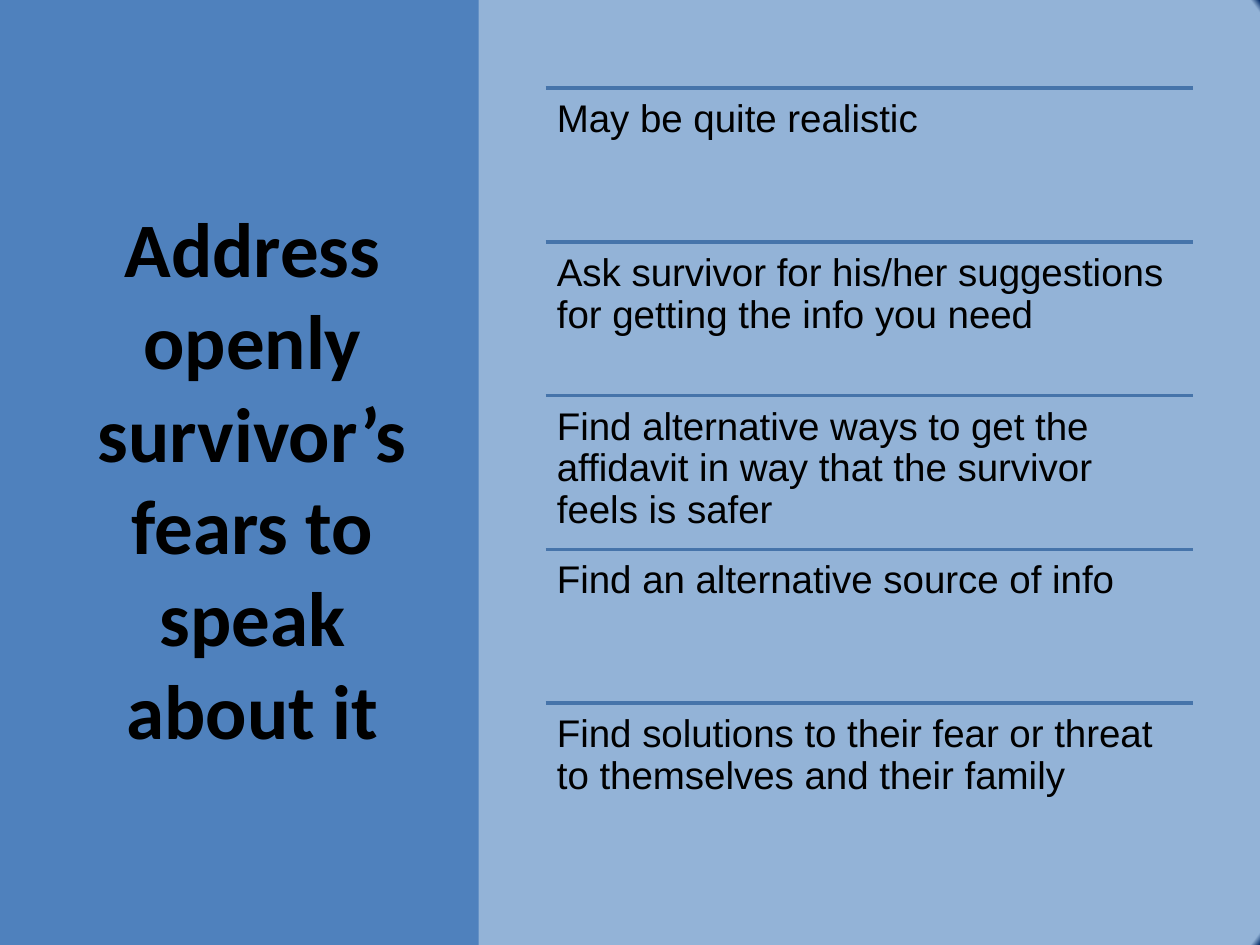
import lxml.etree
import pptx
import pptx.dml.color
import pptx.enum.shapes
import pptx.enum.text
import pptx.oxml.ns
import pptx.util

WIDE, HIGH = 10, 7.5
COLORS = {"panel": "4F81BD", "rule": "4674AA", "text": "000000",
          "back": "93B3D7", "edge": "002763"}
TITLE = "Address openly survivor’s fears to speak about it"
ITEMS = [
    "May be quite realistic",
    "Ask survivor for his/her suggestions for getting the info you need",
    "Find alternative ways to get the affidavit in way that the survivor feels is safer",
    "Find an alternative source of info",
    "Find solutions to their fear or threat to themselves and their family",
]
# List grid: one column, one row per item
LEFT, TOP, COL, ROW = 4.33, 0.7, 5.14, 1.22

ANCHOR = pptx.enum.text.MSO_ANCHOR
ALIGN = pptx.enum.text.PP_ALIGN
HEAD = {
    "frame": {"vertical_anchor": ANCHOR.MIDDLE},
    "para": {"alignment": ALIGN.CENTER},
    "font": {"name": "Calibri", "size": pptx.util.Pt(44), "bold": True},
}
PAD = pptx.util.Inches(0.09)
BODY = {
    "frame": {"vertical_anchor": ANCHOR.TOP, "margin_left": PAD, "margin_right": PAD,
              "margin_top": PAD, "margin_bottom": PAD},
    "para": {"alignment": ALIGN.LEFT, "line_spacing": 0.9},
    "font": {"name": "Arial", "size": pptx.util.Pt(22)},
}


def paint(name):
    return pptx.dml.color.RGBColor.from_string(COLORS[name])


def inch(*nums):
    return [pptx.util.Inches(num) for num in nums]


def node(base, tag, **attrs):
    return lxml.etree.SubElement(base, pptx.oxml.ns.qn(tag), attrs)


def add_back(slide):
    """Radial gradient, dark only at the far corners."""
    slide.background.fill.gradient()
    grad = next(slide.element.iter(pptx.oxml.ns.qn("a:gradFill")))
    for child in list(grad):
        grad.remove(child)
    stops = node(grad, "a:gsLst")
    for share, name in ((0, "back"), (99, "back"), (100, "edge")):
        stop = node(stops, "a:gs", pos=str(share * 1000))
        node(stop, "a:srgbClr", val=COLORS[name])
    way = node(grad, "a:path", path="circle")
    node(way, "a:fillToRect", l="50000", t="50000", r="50000", b="50000")


def add_panel(shapes, *box):
    panel = shapes.add_shape(pptx.enum.shapes.MSO_SHAPE.RECTANGLE, *inch(*box))
    panel.shadow.inherit = False
    panel.fill.solid()
    panel.fill.fore_color.rgb = paint("panel")
    panel.line.fill.background()


def add_text(shapes, words, style, *box):
    frame = shapes.add_textbox(*inch(*box)).text_frame
    frame.word_wrap = True
    para = frame.paragraphs[0]
    run = para.add_run()
    run.text = words
    parts = {"frame": frame, "para": para, "font": run.font}
    for part, values in style.items():
        for key, value in values.items():
            setattr(parts[part], key, value)
    run.font.color.rgb = paint("text")


def add_rule(shapes, left, top, width):
    kind = pptx.enum.shapes.MSO_CONNECTOR.STRAIGHT
    rule = shapes.add_connector(kind, *inch(left, top, left + width, top))
    rule.line.color.rgb = paint("rule")
    rule.line.width = pptx.util.Pt(2)
    node(rule.element.spPr, "a:effectLst")


def main():
    deck = pptx.Presentation()
    deck.slide_width, deck.slide_height = inch(WIDE, HIGH)
    slide = deck.slides.add_slide(deck.slide_layouts[6])
    add_back(slide)

    # Left panel with the title
    add_panel(slide.shapes, 0, 0, WIDE * 0.38, HIGH)
    add_text(slide.shapes, TITLE, HEAD, 0.47, 0.78, 3.07, 6.02)

    # Ruled list
    group = slide.shapes.add_group_shape()
    for i, item in enumerate(ITEMS):
        top = TOP + i * ROW
        add_rule(group.shapes, LEFT, top, COL)
        add_text(group.shapes, item, BODY, LEFT, top, COL, ROW)

    deck.save("out.pptx")


if __name__ == "__main__":
    main()
